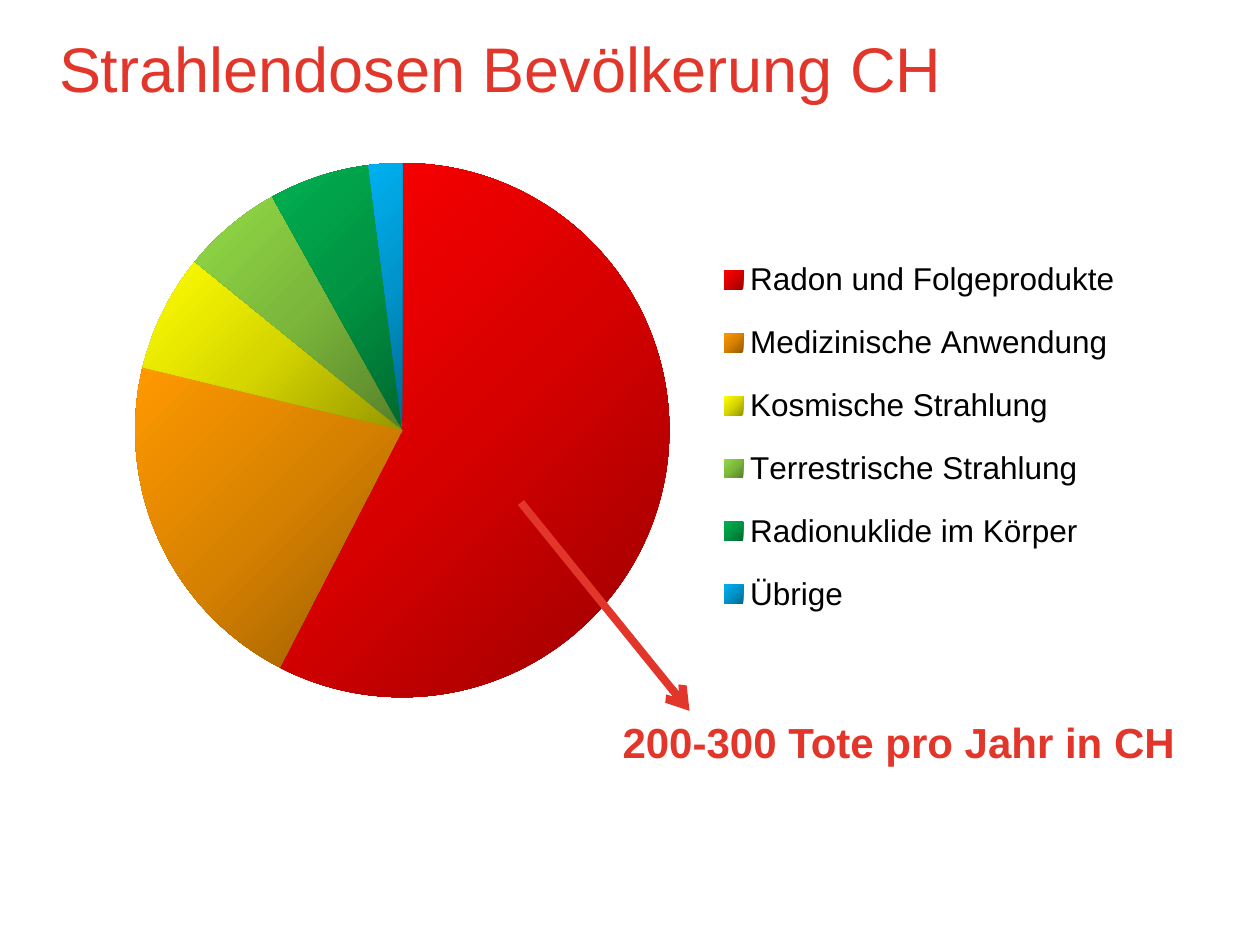
import copy

import pptx
import pptx.chart.data
import pptx.dml.color
import pptx.enum.chart
import pptx.enum.shapes
import pptx.enum.text
import pptx.oxml
import pptx.oxml.ns
import pptx.util
from pptx.util import Cm

# Content
TITLE = "Strahlendosen Bevölkerung CH"
CALLOUT = "200-300 Tote pro Jahr in CH"
# Source of radiation, share in percent, gradient from dark to light
DOSES = [
    ("Radon und Folgeprodukte", 57, ("970000", "D70000", "FF0000")),
    ("Medizinische Anwendung", 21, ("975B00", "D78100", "FF9900")),
    ("Kosmische Strahlung", 7, ("979700", "D7D700", "FFFF00")),
    ("Terrestrische Strahlung", 6, ("57812A", "7BB73B", "92DA46")),
    ("Radionuklide im Körper", 6, ("00682F", "009443", "00B050")),
    ("Übrige", 2, ("00688E", "0094CA", "00B0F0")),
]
# Left, top, width and height as shares of the chart
PIE_PLACE = (0.01, 0.03, 0.53, 0.88)
LEGEND_PLACE = (0.585, 0.148, 0.402, 0.667)

THEME = {
    "font": "Arial",
    "accent": "E3362B",
    "text": "000000",
    "title_size": 36,
    "callout_size": 24,
    "chart_size": 18,
    "arrow_width": 4.5,
}


def rgb(value):
    return pptx.dml.color.RGBColor.from_string(value)


def format_font(font, size, color, bold=False):
    font.name = THEME["font"]
    font.size = pptx.util.Pt(size)
    font.bold = bold
    font.color.rgb = rgb(color)


def write_text(shape, text, size, color, bold=False, wrap=True):
    frame = shape.text_frame
    frame.word_wrap = wrap
    frame.vertical_anchor = pptx.enum.text.MSO_ANCHOR.TOP
    frame.text = text
    paragraph = frame.paragraphs[0]
    paragraph.alignment = pptx.enum.text.PP_ALIGN.LEFT
    format_font(paragraph.runs[0].font, size, color, bold)
    return frame


def fill_gradient(point, colors):
    fill = point.format.fill
    fill.gradient()
    fill.gradient_angle = 135
    # A new gradient has two stops; the middle one is a further copy
    stop_list = list(chart.element.iter(pptx.oxml.ns.qn("a:gsLst")))[-1]
    stop_list.append(copy.deepcopy(stop_list[0]))
    for index, (stop, color) in enumerate(zip(fill.gradient_stops, colors)):
        stop.position = index / (len(colors) - 1)
        stop.color.rgb = rgb(color)


def place_part(part, position, place, target=""):
    """Fix the place of a chart part; its layout becomes child number position."""
    for old_layout in part.findall(pptx.oxml.ns.qn("c:layout")):
        part.remove(old_layout)
    values = "".join(f'<c:{key} val="{value}"/>' for key, value in zip("xywh", place))
    part.insert(position, pptx.oxml.parse_xml(
        f'<c:layout {pptx.oxml.ns.nsdecls("c")}><c:manualLayout>{target}'
        f'<c:xMode val="edge"/><c:yMode val="edge"/>{values}'
        "</c:manualLayout></c:layout>"
    ))


presentation = pptx.Presentation()
presentation.slide_width, presentation.slide_height = Cm(25.4), Cm(19.05)
slide = presentation.slides.add_slide(presentation.slide_layouts[5])

# Title
title = slide.shapes.title
title.left, title.top, title.width, title.height = Cm(1.09), Cm(0.4), Cm(23.39), Cm(3.53)
frame = write_text(title, TITLE, THEME["title_size"], THEME["accent"])
frame.auto_size = pptx.enum.text.MSO_AUTO_SIZE.NONE
frame.margin_left, frame.margin_top = Cm(0.1), Cm(0.2)
frame.margin_right = frame.margin_bottom = 0

# Pie chart
data = pptx.chart.data.CategoryChartData()
data.categories = [name for name, _, _ in DOSES]
data.add_series("Series 1", [share for _, share, _ in DOSES])
chart = slide.shapes.add_chart(
    pptx.enum.chart.XL_CHART_TYPE.PIE, Cm(2.5), Cm(2.92), Cm(20.4), Cm(12.24), data
).chart
chart.has_title = False
format_font(chart.font, THEME["chart_size"], THEME["text"])
chart.has_legend = True
chart.legend.position = pptx.enum.chart.XL_LEGEND_POSITION.RIGHT
chart.legend.include_in_layout = False
format_font(chart.legend.font, THEME["chart_size"], THEME["text"])
plot = chart.plots[0]
plot.vary_by_categories = True
for index, (_, _, colors) in enumerate(DOSES):
    fill_gradient(plot.series[0].points[index], colors)

# Fixed places of pie and legend inside the chart
plot_area = chart.element.find(".//" + pptx.oxml.ns.qn("c:plotArea"))
legend = chart.element.find(".//" + pptx.oxml.ns.qn("c:legend"))
place_part(plot_area, 0, PIE_PLACE, '<c:layoutTarget val="inner"/>')
place_part(legend, 1, LEGEND_PLACE)

# Callout text
callout = slide.shapes.add_textbox(Cm(12.3), Cm(14.31), Cm(11.81), Cm(1.27))
frame = write_text(callout, CALLOUT, THEME["callout_size"], THEME["accent"], bold=True)
frame.auto_size = pptx.enum.text.MSO_AUTO_SIZE.SHAPE_TO_FIT_TEXT

# Arrow from the radon slice to the callout
arrow = slide.shapes.add_connector(
    pptx.enum.shapes.MSO_CONNECTOR.STRAIGHT, Cm(10.5), Cm(10.13), Cm(13.9), Cm(14.33)
)
arrow.line.color.rgb = rgb(THEME["accent"])
arrow.line.width = pptx.util.Pt(THEME["arrow_width"])
namespace = pptx.oxml.ns.nsdecls("a")
arrow.element.spPr.find(pptx.oxml.ns.qn("a:ln")).append(
    pptx.oxml.parse_xml(f'<a:tailEnd {namespace} type="arrow"/>')
)
arrow.element.spPr.append(pptx.oxml.parse_xml(f"<a:effectLst {namespace}/>"))

presentation.save("out.pptx")
